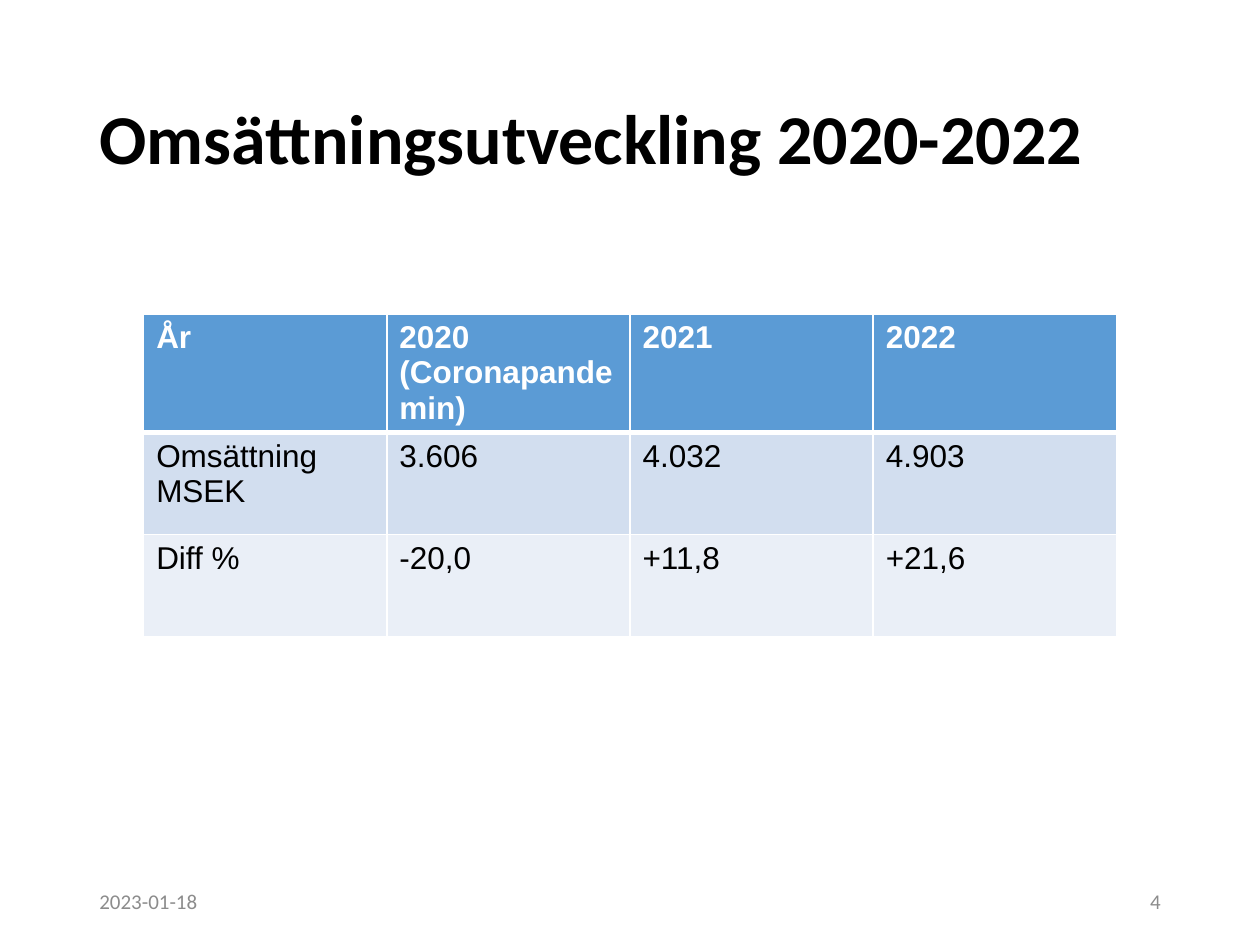
from dataclasses import dataclass

from lxml import etree
from pptx import Presentation
from pptx import util as u
from pptx.dml.color import RGBColor
from pptx.enum import text
from pptx.oxml import ns


@dataclass(frozen=True)
class Theme:
    black: str = "000000"
    white: str = "FFFFFF"
    gray: str = "8C8C8C"
    head: str = "5B9BD5"
    bands: tuple = ("D2DEEF", "EAEFF7")
    sans: str = "Calibri"
    grid: str = "Arial"
    title: int = 40
    cell: int = 18
    foot: int = 12


THEME = Theme()
ROWS = [
    ["År", "2020\n(Coronapandemin)", "2021", "2022"],
    ["Omsättning MSEK", "3.606", "4.032", "4.903"],
    ["Diff %", "-20,0", "+11,8", "+21,6"],
]


def style(frame, face, size, color, bold=False):
    for para in frame.paragraphs:
        for run in para.runs:
            font = run.font
            font.name, font.size, font.bold = face, u.Pt(size), bold
            font.color.rgb = RGBColor.from_string(color)


def place(shape, left, top, width, height):
    shape.left, shape.top = u.Inches(left), u.Inches(top)
    shape.width, shape.height = u.Inches(width), u.Inches(height)


def add_title(slide, words):
    title = slide.shapes.title
    place(title, 0.69, 0.4, 8.62, 1.45)
    frame = title.text_frame
    frame.text = words
    frame.word_wrap = True
    frame.vertical_anchor = text.MSO_ANCHOR.MIDDLE
    para = frame.paragraphs[0]
    para.alignment = text.PP_ALIGN.LEFT
    para.line_spacing = 0.9
    style(frame, THEME.sans, THEME.title, THEME.black, True)


def add_edges(cell, widths):
    """Draw white cell borders; widths maps a side (L, R, T, B) to points."""
    props = cell._tc.get_or_add_tcPr()
    for side, width in widths.items():
        line = etree.SubElement(props, ns.qn(f"a:ln{side}"), w=str(u.Pt(width)))
        fill = etree.SubElement(line, ns.qn("a:solidFill"))
        etree.SubElement(fill, ns.qn("a:srgbClr"), val=THEME.white)


def add_table(slide, rows):
    count, cols = len(rows), len(rows[0])
    table = slide.shapes.add_table(
        count, cols, u.Inches(1.14), u.Inches(2.49),
        u.Inches(1.93 * cols), u.Inches(0.81 * count)).table
    for r, row in enumerate(rows):
        head = r == 0
        shade = THEME.head if head else THEME.bands[(r - 1) % 2]
        ink = THEME.white if head else THEME.black
        for c, words in enumerate(row):
            cell = table.cell(r, c)
            cell.text_frame.text = words
            style(cell.text_frame, THEME.grid, THEME.cell, ink, head)
            add_edges(cell, {"L": 1, "R": 1, "T": 3 if r == 1 else 1,
                             "B": 3 if head else 1})
            cell.fill.solid()
            cell.fill.fore_color.rgb = RGBColor.from_string(shade)


def add_foot(slide, left, words, align):
    box = slide.shapes.add_textbox(
        u.Inches(left), u.Inches(6.95), u.Inches(2.25), u.Inches(0.4))
    frame = box.text_frame
    frame.text = words
    frame.word_wrap = True
    frame.vertical_anchor = text.MSO_ANCHOR.MIDDLE
    frame.paragraphs[0].alignment = align
    style(frame, THEME.sans, THEME.foot, THEME.gray)


def main():
    deck = Presentation()
    deck.slide_width, deck.slide_height = u.Inches(10), u.Inches(7.5)
    slide = deck.slides.add_slide(deck.slide_layouts[5])
    add_title(slide, "Omsättningsutveckling 2020-2022")
    add_table(slide, ROWS)
    add_foot(slide, 0.69, "2023-01-18", text.PP_ALIGN.LEFT)
    add_foot(slide, 7.06, "4", text.PP_ALIGN.RIGHT)
    deck.save("out.pptx")


if __name__ == "__main__":
    main()
